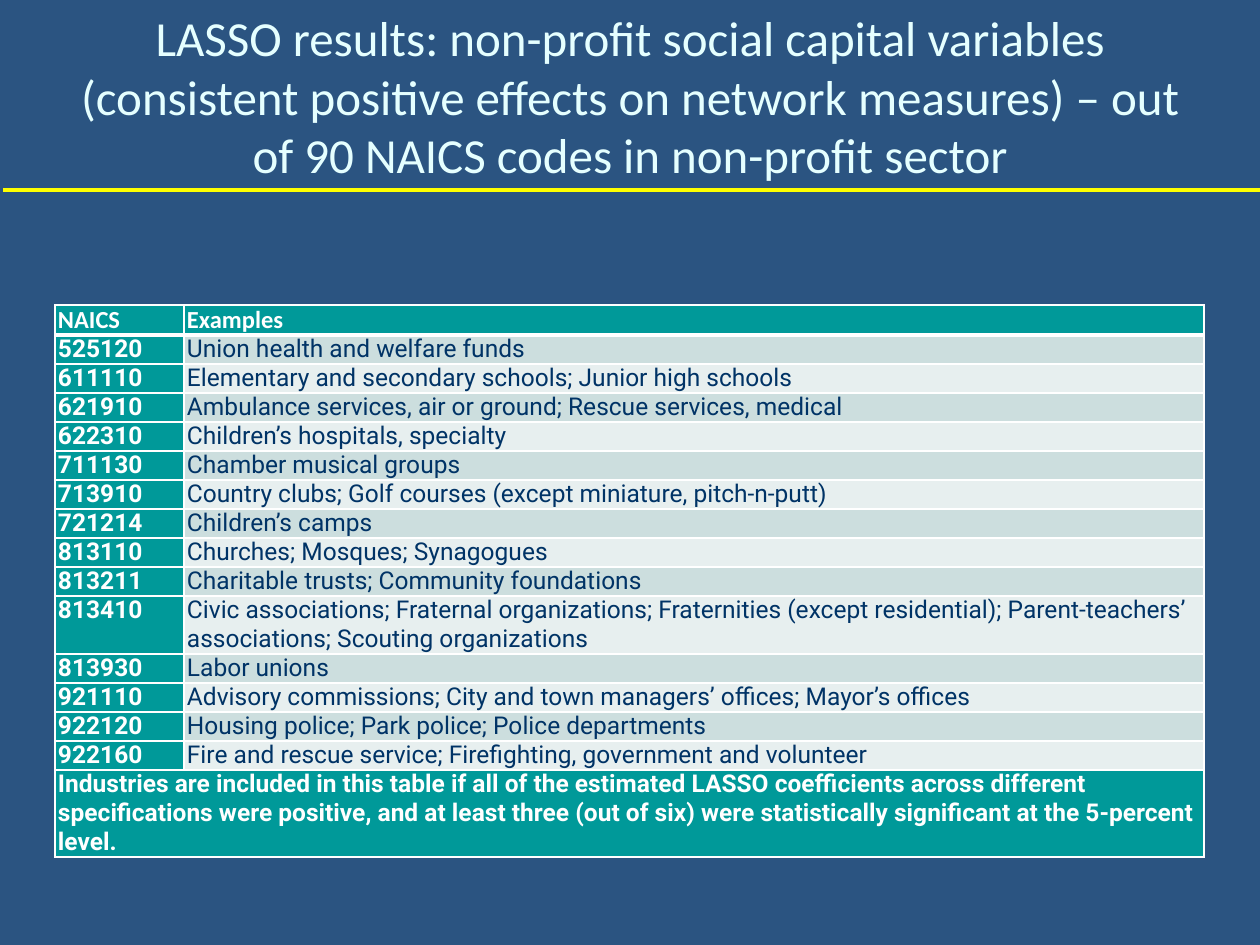
from dataclasses import dataclass

from lxml import etree
from pptx import Presentation
from pptx.dml.color import RGBColor
from pptx.enum.shapes import MSO_CONNECTOR
from pptx.enum.text import MSO_ANCHOR, PP_ALIGN
from pptx.oxml.ns import qn
from pptx.util import Emu, Pt

STRAIGHT = MSO_CONNECTOR.STRAIGHT
MIDDLE = MSO_ANCHOR.MIDDLE
CENTER = PP_ALIGN.CENTER
TITLE_ONLY = 5
EMU_PER_PX = 914400 / 126


@dataclass(frozen=True)
class Theme:
    background: str = "2B5481"
    title: str = "E5FFFF"
    rule: str = "FFFF00"
    accent: str = "009999"
    light: str = "FFFFFF"
    dark: str = "003366"
    bands: tuple = ("CCDEDE", "E7EFEF")
    heading_font: str = "Calibri"
    body_font: str = "Roboto"
    title_size: int = 28
    table_size: int = 14


TITLE = ("LASSO results: non-profit social capital variables (consistent positive "
         "effects on network measures) – out of 90 NAICS codes in non-profit sector")
HEADINGS = ("NAICS", "Examples")
INDUSTRIES = [
    ("525120", "Union health and welfare funds"),
    ("611110", "Elementary and secondary schools; Junior high schools"),
    ("621910", "Ambulance services, air or ground; Rescue services, medical"),
    ("622310", "Children’s hospitals, specialty"),
    ("711130", "Chamber musical groups"),
    ("713910", "Country clubs; Golf courses (except miniature, pitch-n-putt)"),
    ("721214", "Children’s camps"),
    ("813110", "Churches; Mosques; Synagogues"),
    ("813211", "Charitable trusts; Community foundations"),
    ("813410", "Civic associations; Fraternal organizations; Fraternities (except "
               "residential); Parent-teachers’ associations; Scouting organizations"),
    ("813930", "Labor unions"),
    ("921110", "Advisory commissions; City and town managers’ offices; Mayor’s offices"),
    ("922120", "Housing police; Park police; Police departments"),
    ("922160", "Fire and rescue service; Firefighting, government and volunteer"),
]
NOTE = ("Industries are included in this table if all of the estimated LASSO "
        "coefficients across different specifications were positive, and at least "
        "three (out of six) were statistically significant at the 5-percent level.")
LINE_HEIGHT = 29
LINES_IN_ROW = {"813410": 2, NOTE: 3}


def px(length):
    return Emu(round(length * EMU_PER_PX))


class SlideBuilder:
    def __init__(self, slide, theme):
        self.slide = slide
        self.theme = theme
        self.paint(slide.background.fill, theme.background)

    def paint(self, fill, color):
        fill.solid()
        fill.fore_color.rgb = RGBColor.from_string(color)

    def add_text(self, frame, text, color, **font_format):
        run = frame.paragraphs[0].add_run()
        run.text = text
        run.font.color.rgb = RGBColor.from_string(color)
        for attribute, value in font_format.items():
            setattr(run.font, attribute, value)

    def title(self, text, left, top, width, height):
        title = self.slide.shapes.title
        place = {"left": left, "top": top, "width": width, "height": height}
        for attribute, length in place.items():
            setattr(title, attribute, px(length))
        frame = title.text_frame
        frame.word_wrap = True
        frame.vertical_anchor = MIDDLE
        self.add_text(frame, text, self.theme.title, name=self.theme.heading_font,
                      size=Pt(self.theme.title_size), bold=False)
        frame.paragraphs[0].alignment = CENTER

    def rule(self, left, right, y, weight):
        rule = self.slide.shapes.add_connector(STRAIGHT, px(left), px(y), px(right), px(y))
        rule.line.color.rgb = RGBColor.from_string(self.theme.rule)
        rule.line.width = Pt(weight)
        etree.SubElement(rule._element.spPr, qn("a:effectLst"))

    def borders(self, cell, weights):
        properties = cell._tc.get_or_add_tcPr()
        for side, weight in weights.items():
            line = etree.SubElement(properties, qn(f"a:ln{side}"), w=str(Pt(weight)))
            fill = etree.SubElement(line, qn("a:solidFill"))
            etree.SubElement(fill, qn("a:srgbClr"), val=self.theme.light)

    def cell(self, cell, text, fill, color, font, bold, weights):
        margins = {"left": 3, "right": 3, "top": 0, "bottom": 0}
        for side, length in margins.items():
            setattr(cell, f"margin_{side}", px(length))
        self.borders(cell, weights)
        self.paint(cell.fill, fill)
        if text:
            self.add_text(cell.text_frame, text, color, name=font, bold=bold,
                          size=Pt(self.theme.table_size))

    def table(self, rows, left, top, column_widths):
        theme = self.theme
        heights = [LINE_HEIGHT * LINES_IN_ROW.get(row[0], 1) for row in rows]
        table = self.slide.shapes.add_table(
            len(rows), len(column_widths), px(left), px(top),
            px(sum(column_widths)), px(sum(heights))).table
        table.first_row = table.horz_banding = False
        for column, width in zip(table.columns, column_widths):
            column.width = px(width)
        last = len(rows) - 1
        for r, (row, height) in enumerate(zip(rows, heights)):
            table.rows[r].height = px(height)
            weights = {"L": 1, "R": 1, "T": 3 if r == 1 else 1, "B": 3 if r == 0 else 1}
            font = theme.heading_font if r == 0 else theme.body_font
            for c, text in enumerate(row):
                strong = r in (0, last) or c == 0
                fill = theme.accent if strong else theme.bands[(r - 1) % 2]
                color = theme.light if strong else theme.dark
                self.cell(table.cell(r, c), text, fill, color, font, strong, weights)
        # Closing note spans the full width
        table.cell(last, 0).merge(table.cell(last, len(column_widths) - 1))


def main():
    deck = Presentation()
    deck.slide_width, deck.slide_height = px(1260), px(945)
    slide = deck.slides.add_slide(deck.slide_layouts[TITLE_ONLY])
    builder = SlideBuilder(slide, Theme())

    # Heading and the rule below it
    builder.title(TITLE, 64, 1, 1132, 189)
    builder.rule(3, 1260, 190, 2)

    # Industries with consistent positive effects
    builder.table([HEADINGS, *INDUSTRIES, (NOTE, "")], 55, 305, (129, 1020))

    deck.save("out.pptx")


if __name__ == "__main__":
    main()
